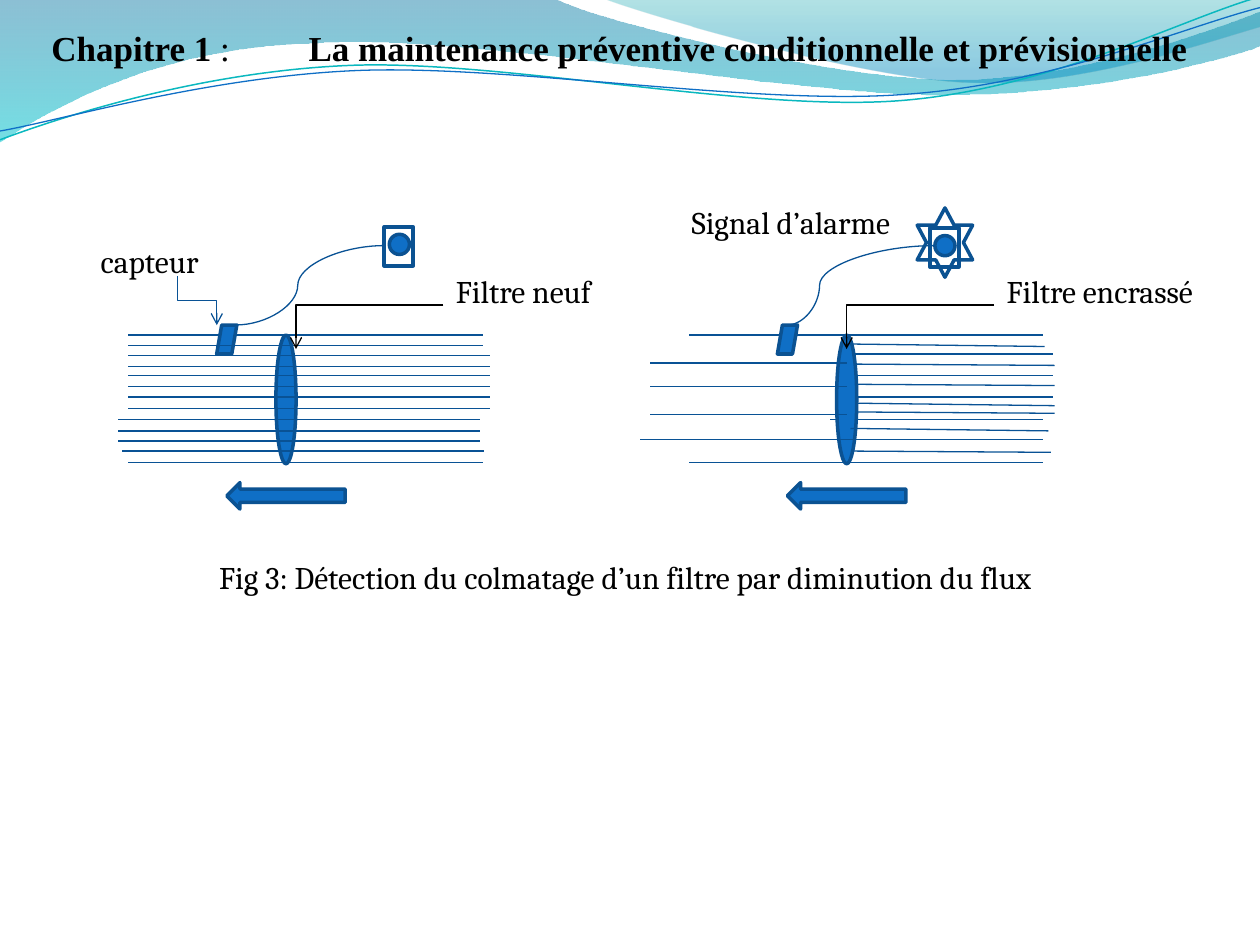
from math import cos, radians, sin
from lxml.etree import SubElement
from pptx import Presentation
from pptx.dml.color import RGBColor
from pptx.enum.shapes import MSO_CONNECTOR, MSO_SHAPE
from pptx.enum.text import MSO_AUTO_SIZE
from pptx.oxml.ns import qn
from pptx.util import Emu, Pt

PX = 9144
BLUE = RGBColor(0x0F, 0x6F, 0xC6)
EDGE = RGBColor(0x0B, 0x52, 0x92)
FLOW = RGBColor(0x09, 0x52, 0x95)
TEAL = RGBColor(0x0A, 0xB8, 0xBF)
BLACK = RGBColor(0, 0, 0)
SKY = (RGBColor(0x00, 0x74, 0xA1), RGBColor(0x00, 0xC6, 0xCF))
SEA = (RGBColor(0x00, 0xA1, 0xA9), RGBColor(0x00, 0x8B, 0xBF))
COMMANDS = {2: "a:lnTo", 6: "a:cubicBezTo"}


def px(*lengths):
    return [Emu(round(length * PX)) for length in lengths]


def turn_back(point, box, rotation):
    left, top, width, height = box
    x, y = point[0] - left - width / 2, point[1] - top - height / 2
    angle = radians(-rotation)
    return (x * cos(angle) - y * sin(angle) + width / 2,
            x * sin(angle) + y * cos(angle) + height / 2)


def outline(page, box, start, segments, closed=False, rotation=0):
    builder = page.shapes.build_freeform(*px(*start), scale=1.0)
    builder.add_line_segments([px(*segment[-2:]) for segment in segments], close=closed)
    shape = builder.convert_to_shape()
    shape.left, shape.top, shape.width, shape.height = px(*box)
    shape.rotation = rotation
    shape.shadow.inherit = False
    track = next(shape._element.iter(qn("a:path")))
    for node in list(track):
        track.remove(node)
    track.set("w", str(box[2] * PX))
    track.set("h", str(box[3] * PX))
    for name, numbers in [("a:moveTo", start), *((COMMANDS[len(s)], s) for s in segments)]:
        command = SubElement(track, qn(name))
        for point in zip(numbers[::2], numbers[1::2]):
            x, y = px(*turn_back(point, box, rotation))
            SubElement(command, qn("a:pt"), x=str(x), y=str(y))
    if closed:
        SubElement(track, qn("a:close"))
    return shape


def wave_band(page, box, start, segments, colours, opacities, last_stop):
    shape = outline(page, box, start, segments, closed=True)
    shape.line.fill.background()
    shape.fill.gradient()
    shape.fill.gradient_angle = 270
    stops = shape.fill.gradient_stops
    for stop, colour, position in zip(stops, colours, (0, last_stop)):
        stop.color.rgb = colour
        stop.position = position
    for node, opacity in zip(shape._element.spPr.iter(qn("a:srgbClr")), opacities):
        SubElement(node, qn("a:alpha"), val=str(opacity * 1000))


def wave_line(page, box, start, segments, colour, width):
    shape = outline(page, box, start, segments, rotation=357.3)
    shape.fill.background()
    shape.line.color.rgb = colour
    shape.line.width = Pt(width)


def wave_header(page):
    wave_band(page, (-1, -1, 1002, 114), (0, 0), [
        (440, -1), (476, 17, 664, 63, 758, 63), (853, 63, 958, 26, 1000, 9),
        (1001, 36), (983, 44, 870, 76, 746, 75), (622, 75, 382, 28, 257, 34),
        (129, 36, 46, 83, -1, 113), (0, 0)], SKY, (45, 55), 1)
    wave_band(page, (479, -1, 521, 70), (479, -1), [
        (509, 11, 682, 62, 769, 65), (856, 69, 961, 32, 1000, 21), (1000, 0),
        (479, -1)], SEA, (30, 45), 0.8)
    wave_line(page, (-2, 22, 1002, 71), (0, 111), [
        (48, 93, 158, 57, 277, 52), (395, 47, 593, 89, 713, 80),
        (833, 71, 938, 15, 998, -2)], TEAL, 0.85)
    wave_line(page, (-2, 30, 1003, 58), (0, 104), [
        (47, 96, 164, 61, 283, 56), (403, 51, 597, 84, 717, 75),
        (836, 67, 941, 21, 1000, 6)], BLUE, 0.75)


def text_box(page, box, spans, size=18, font="Cambria"):
    frame = page.shapes.add_textbox(*px(*box)).text_frame
    frame.word_wrap = True
    frame.auto_size = MSO_AUTO_SIZE.SHAPE_TO_FIT_TEXT
    para = frame.paragraphs[0]
    for text, bold in spans:
        span = para.add_run()
        span.text = text
        span.font.name = font
        span.font.size = Pt(size)
        span.font.bold = bold
        span.font.color.rgb = BLACK
    return para


def solid(page, kind, box, filled=True):
    shape = page.shapes.add_shape(kind, *px(*box))
    shape.shadow.inherit = False
    if filled:
        shape.fill.solid()
        shape.fill.fore_color.rgb = BLUE
    else:
        shape.fill.background()
    shape.line.color.rgb = EDGE
    shape.line.width = Pt(2)


def link(page, ends, kind=MSO_CONNECTOR.STRAIGHT, colour=FLOW, arrow=False):
    connector = page.shapes.add_connector(kind, *px(*ends))
    connector.line.color.rgb = colour
    connector.line.width = Pt(0.75)
    properties = connector._element.spPr
    if arrow:
        SubElement(properties.find(qn("a:ln")), qn("a:tailEnd"), type="arrow")
    SubElement(properties, qn("a:effectLst"))
    return properties


def flow_lines(page, left, top, lines):
    for start, end, y, drop in lines:
        link(page, (left + start, top + y, left + end, top + y + drop))


def sensor_wire(page, ends, bend):
    geometry = link(page, ends, MSO_CONNECTOR.CURVE).find(qn("a:prstGeom"))
    guides = geometry.get_or_add_avLst()
    SubElement(guides, qn("a:gd"), name="adj1", fmla=f"val {bend}")


def filter_label(page, left, top, text):
    text_box(page, (left, top, 180, 40), [(text, False)])
    ends = (left, top + 31, left - 117, top + 66)
    properties = link(page, ends, MSO_CONNECTOR.ELBOW, BLACK, True)
    properties.find(qn("a:prstGeom")).set("prst", "bentConnector2")


def lamp(page, left, top):
    solid(page, MSO_SHAPE.RECTANGLE, (left, top, 23, 31), False)
    solid(page, MSO_SHAPE.OVAL, (left + 4, top + 6, 16, 16))


def filter_unit(page, left, top, back_lines, front_lines):
    walls = [(0, 281, y, 0) for y in (8, 109)]
    flow_lines(page, left, top, walls + back_lines)
    solid(page, MSO_SHAPE.OVAL, (left + 117, top + 8, 16, 102))
    solid(page, MSO_SHAPE.PARALLELOGRAM, (left + 70, top, 16, 23))
    flow_lines(page, left, top, front_lines)
    solid(page, MSO_SHAPE.LEFT_ARROW, (left + 78, top + 125, 94, 21))


def sensor_label(page, left, top):
    text_box(page, (left, top, 109, 40), [("capteur", False)])
    ends = (left + 106, top + 36, left + 67, top + 67)
    properties = link(page, ends, MSO_CONNECTOR.ELBOW, FLOW, True)
    properties.find(qn("a:xfrm")).set("rot", str(270 * 60000))


def clean_panel(page, left, top):
    upper = [(0, 287, y, 0) for y in (24, 33, 40, 49, 57, 66)]
    lower = [(-8, 279, y, 0) for y in (75, 84, 92)]
    edges = [(0, 281, 16, 0), (-5, 282, 100, 0)]
    filter_unit(page, left, top, [], upper + lower + edges)
    sensor_wire(page, (left + 85, top, left + 203, top - 63), 41800)
    lamp(page, left + 203, top - 78)
    sensor_label(page, left - 32, top - 71)
    filter_label(page, left + 250, top - 47, "Filtre neuf")


def clogged_panel(page, left, top):
    back = [(120, 289, y, 0) for y in (23, 40, 57)]
    back += [(112, 281, y, 0) for y in (75, 91)]
    inlet = [(125, 282, 15, 2), (128, 285, 82, 2), (129, 287, 100, 1)]
    inlet += [(133, 290, y, drop) for y, drop in ((31, 1), (47, 1), (62, 2), (69, 1))]
    outlet = [(-31, 125, y, 0) for y in (30, 49, 71)] + [(-39, 130, 91, 0)]
    filter_unit(page, left, top, back, inlet + outlet)
    lamp(page, left + 191, top - 77)
    sensor_wire(page, (left + 78, top, left + 195, top - 63), 21800)
    solid(page, MSO_SHAPE.STAR_6_POINT, (left + 181, top - 93, 44, 55), False)
    text_box(page, (left - 8, top - 102, 180, 40), [("Signal d’alarme", False)])
    filter_label(page, left + 242, top - 47, "Filtre encrassé")


def chapter_title(page, box):
    para = text_box(page, box, [
        ("Chapitre 1", True), (" :\t", False),
        ("La maintenance préventive conditionnelle et prévisionnelle", True)],
        20, "Times New Roman")
    stops = SubElement(para._p.get_or_add_pPr(), qn("a:tabLst"))
    SubElement(stops, qn("a:tab"), pos=str(204 * PX), algn="l")


def main():
    deck = Presentation()
    deck.slide_width, deck.slide_height = px(1000, 750)
    page = deck.slides.add_slide(deck.slide_layouts[6])
    wave_header(page)
    clean_panel(page, 102, 258)
    clogged_panel(page, 547, 258)
    caption = "Fig 3: Détection du colmatage d’un filtre par diminution du flux"
    text_box(page, (164, 438, 711, 40), [(caption, False)])
    chapter_title(page, (31, 16, 938, 44))
    deck.save("out.pptx")


if __name__ == "__main__":
    main()
